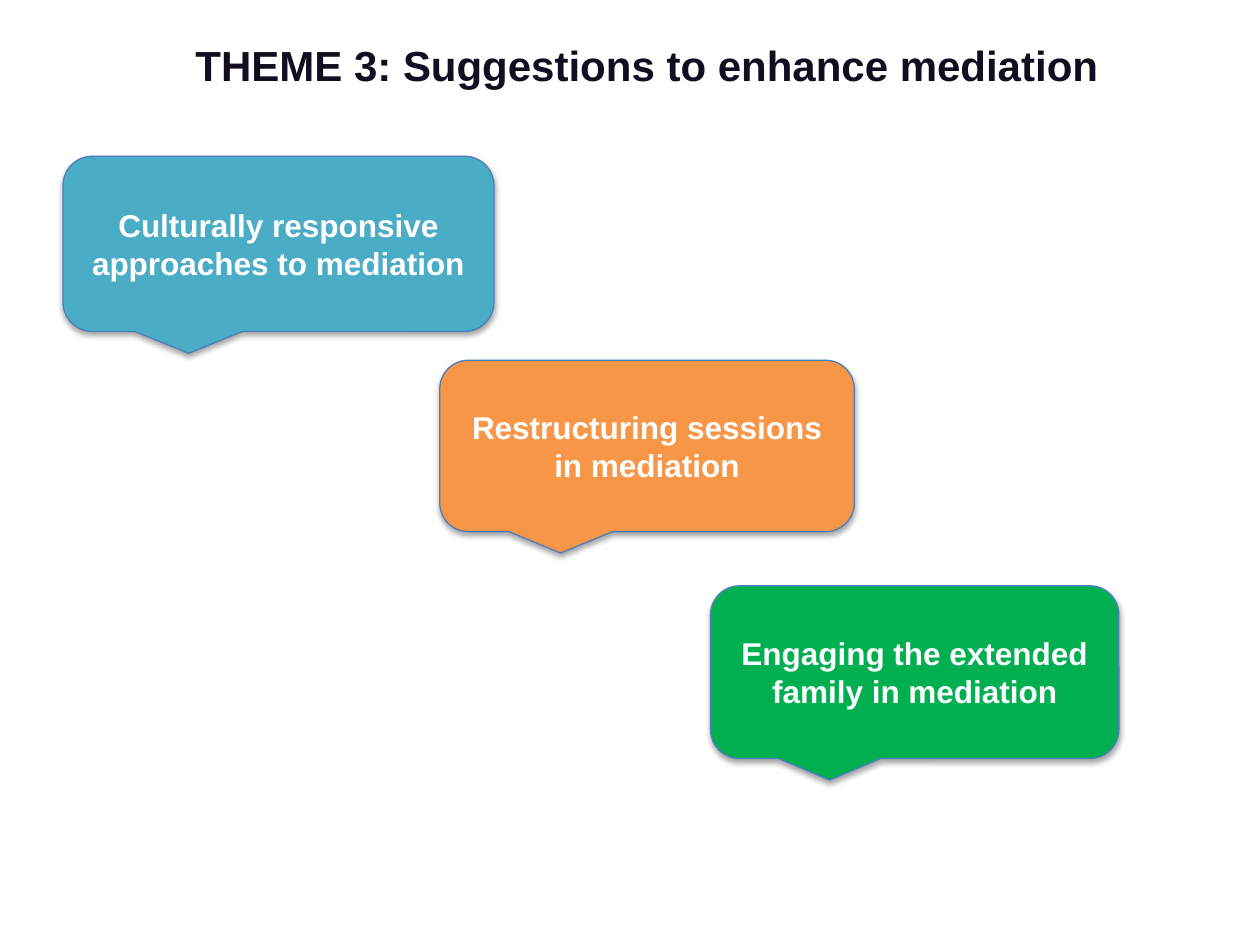
from pptx import Presentation
from pptx.dml.color import RGBColor as Rgb
from pptx.enum.shapes import MSO_SHAPE as Kind
from pptx.enum.text import MSO_ANCHOR as Anchor, PP_ALIGN as Align
from pptx.util import Inches, Pt

HUES = {"ink": "120D1F", "text": "FFFFFF", "edge": "4B7EBC",
        "teal": "4BACC6", "orange": "F79646", "green": "00B050"}
COLS, ROWS = 100, 75

deck = Presentation()
deck.slide_width, deck.slide_height = Inches(10), Inches(7.5)
slide = deck.slides.add_slide(deck.slide_layouts[6])


def place(col, row, wide, high):
    """Turn grid columns and rows into slide lengths."""
    w, h = deck.slide_width / COLS, deck.slide_height / ROWS
    return [round(n) for n in (col * w, row * h, wide * w, high * h)]


def write(shape, text, size, hue):
    """Put one centred bold run in a shape."""
    frame = shape.text_frame
    frame.word_wrap = True
    frame.vertical_anchor = Anchor.MIDDLE
    para = frame.paragraphs[0]
    para.alignment = Align.CENTER
    run = para.add_run()
    run.text = text
    font = run.font
    font.name, font.size, font.bold = "Arial", Pt(size), True
    font.color.rgb = Rgb.from_string(HUES[hue])


# Title
title = slide.shapes.add_textbox(*place(5, 2.4, 92.7, 5.4))
write(title, "THEME 3: Suggestions to enhance mediation", 24, "ink")

# Callouts stepping down the slide; they keep the theme's soft shadow
themes = [
    ("Culturally responsive approaches to mediation", "teal", (5, 12.4, 34.2, 13.9)),
    ("Restructuring sessions in mediation", "orange", (34.9, 28.6, 32.9, 13.6)),
    ("Engaging the extended family in mediation", "green", (56.4, 46.5, 32.4, 13.7)),
]
for text, hue, spot in themes:
    call = slide.shapes.add_shape(Kind.ROUNDED_RECTANGULAR_CALLOUT, *place(*spot))
    call.fill.solid()
    call.fill.fore_color.rgb = Rgb.from_string(HUES[hue])
    call.line.color.rgb = Rgb.from_string(HUES["edge"])
    call.line.width = Pt(0.75)
    write(call, text, 18, "text")

deck.save("out.pptx")
